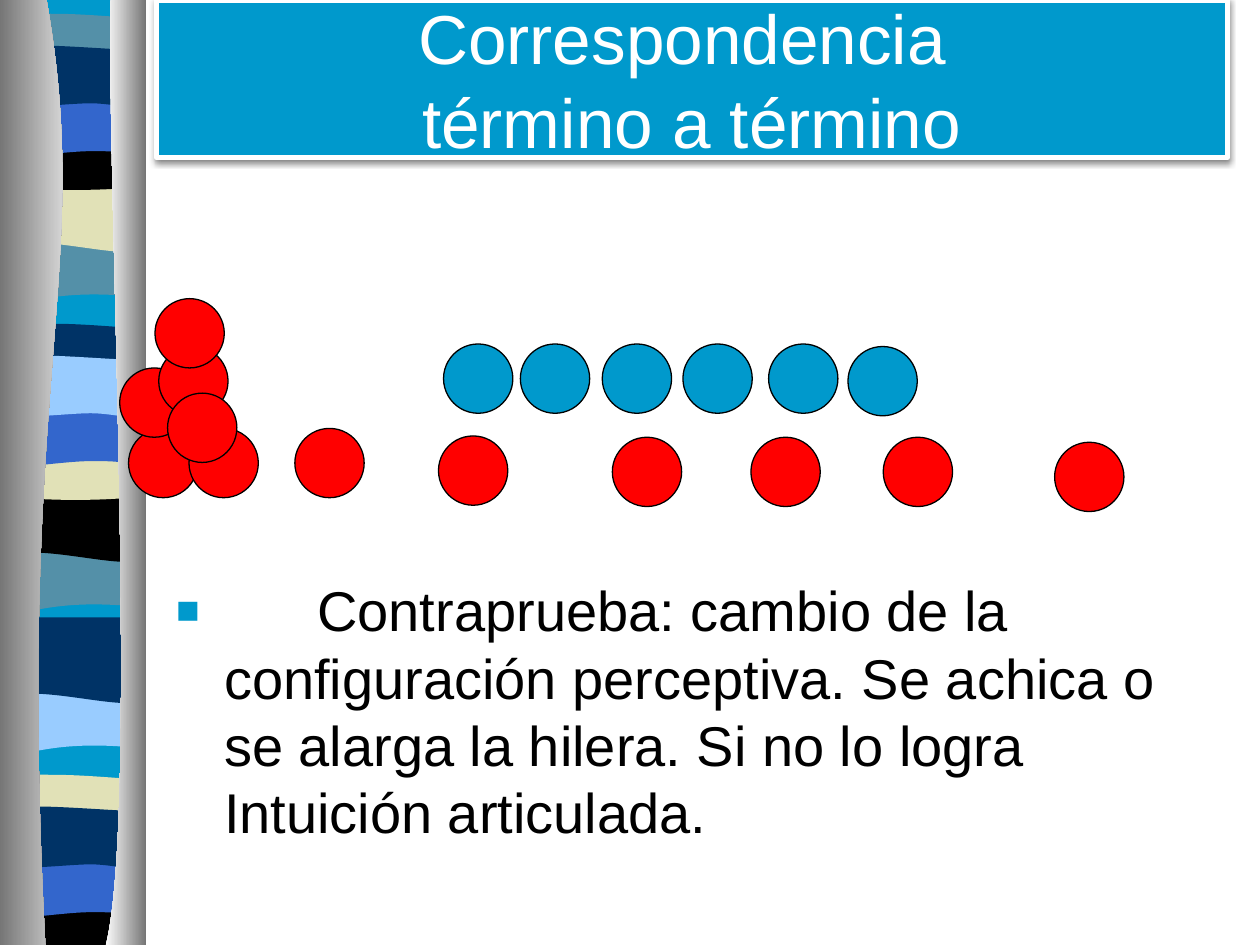
from lxml import etree
from pptx import Presentation
from pptx.dml.color import RGBColor
from pptx.enum import shapes, text
from pptx.oxml import ns
from pptx.util import Inches, Pt

COLORS = {
    "teal": "0099CC", "slate": "5490A8", "navy": "003366", "blue": "3366CC",
    "sky": "99CCFF", "sand": "E1E1B7", "black": "000000", "white": "FFFFFF",
    "gray": "767676", "red": "FF0000",
}
FONT = "Arial"
DIAMETER = 0.55

WAVES = [
    ((0.05, 1.85, 1.08, 0.55), [
        [(1.14, 1.85)], [(1.14, 2.36)],
        [(0.39, 2.28), (0.24, 2.44), (0.05, 2.39)], [(0.05, 1.85)]]),
    ((0.06, 1.41, 1.08, 0.55), [
        [(1.14, 1.32)], [(1.14, 1.98)],
        [(0.96, 2.06), (0.39, 1.87), (0.06, 1.94)], [(0.06, 1.32)]]),
    ((0.05, 0.16, 1.08, 0.33), [
        [(1.14, 0.15)], [(1.14, 0.45)],
        [(0.96, 0.5), (0.24, 0.5), (0.05, 0.45)], [(0.05, 0.15)],
        [(0.12, 0.09), (0.29, 0.11), (0.47, 0.11)],
        [(0.65, 0.11), (1, 0.14), (1.14, 0.15)]]),
    ((0.06, 1.08, 1.08, 0.38), [
        [(1.14, 1.08)], [(1.14, 1.47)],
        [(0.96, 1.52), (0.24, 1.52), (0.06, 1.47)], [(0.06, 1.08)],
        [(0.72, 1.13), (0.91, 1.08), (1.14, 1.08)]]),
    ((0.06, 0.74, 1.08, 0.47), [
        [(1.14, 0.74)], [(1.14, 1.25)],
        [(0.97, 1.2), (0.9, 1.2), (0.72, 1.2)],
        [(0.54, 1.2), (0.22, 1.25), (0.06, 1.25)], [(0.06, 0.74)]]),
    ((0.05, 0.41, 1.1, 0.41), [
        [(1.14, 0.4)], [(1.14, 0.83)],
        [(1.07, 0.88), (0.9, 0.82), (0.72, 0.82)],
        [(0.54, 0.82), (0.17, 0.87), (0.05, 0.83)], [(0.05, 0.38)],
        [(0.21, 0.33), (0.79, 0.39), (1.14, 0.4)]]),
]
STRIPES = [
    (("slate", "sand", "slate", "black", "blue", "navy"), (0,) * 6),
    (("slate", "black", "navy", "sand", "blue", "sky"), (2.46,) * 6),
    (("sky", "navy", "sand", "black", "blue", "navy"), (3.58,) * 2 + (6.04,) * 4),
]
BLUE_ROW = [(4.13, 2.73), (3.52, 2.73), (4.78, 2.73), (5.42, 2.73),
            (6.1, 2.73), (6.73, 2.75)]
RED_PILE = [(1.02, 3.4), (0.95, 2.92), (1.5, 3.4), (1.26, 2.75),
            (1.33, 3.12), (1.23, 2.37)]
RED_ROW = [(2.34, 3.4), (3.48, 3.46), (4.86, 3.47), (5.96, 3.47),
           (7.01, 3.47), (8.37, 3.51)]


def rgb(name):
    return RGBColor.from_string(COLORS[name])


def add_xml(parent, tag, **attributes):
    return etree.SubElement(parent, ns.qn(tag), attributes)


def add_outline(s, x, y, w, h, segments):
    corners = [(x, y), (x + w, y), (x + w, y + h), (x, y + h)]
    corners = [(Inches(a), Inches(b)) for a, b in corners]
    builder = s.shapes.build_freeform(*corners[0])
    builder.add_line_segments(corners[1:], close=True)
    sp = builder.convert_to_shape()
    sp.shadow.inherit = False
    sp.line.fill.background()
    outline = next(sp._element.iter(ns.qn("a:path")))
    for child in list(outline):
        outline.remove(child)
    for i, points in enumerate(segments):
        tag = "a:cubicBezTo" if len(points) == 3 else "a:lnTo" if i else "a:moveTo"
        step = add_xml(outline, tag)
        for a, b in points:
            add_xml(step, "a:pt", x=str(Inches(a - x)), y=str(Inches(b - y)))
    add_xml(outline, "a:close")
    return sp


def fill_solid(sp, color):
    sp.fill.solid()
    sp.fill.fore_color.rgb = rgb(color)


def add_curtain(s, x, y, w, h, edge, side, colors):
    start, *curve = edge
    sp = add_outline(s, x, y, w, h,
                     [[start], curve, [(side, y + h)], [(side, y)]])
    sp.fill.gradient()
    sp.fill.gradient_angle = 0
    for stop, name, position in zip(sp.fill.gradient_stops, colors, (0, 1)):
        stop.color.rgb = rgb(name)
        stop.position = position


def add_ribbon(s, x, y, w, h):
    base = [[(x + 1.14, y)], [(x + 1.14, y + 7.47)],
            [(x + 0.05, y + 7.47)], [(x + 0.05, y)]]
    fill_solid(add_outline(s, x + 0.05, y, 1.08, 7.48, base), "teal")
    for names, drops in STRIPES:
        for name, drop, ((left, top, width, height), segments) in zip(names, drops, WAVES):
            moved = [[(x + a, y + b + drop) for a, b in points] for points in segments]
            sp = add_outline(s, x + left, y + top + drop, width, height, moved)
            fill_solid(sp, name)
    add_curtain(s, x, y, 0.72, h,
                [(x + 0.37, y), (x + 0.75, y + 2.16), (x + 0.12, y + 2.96),
                 (x + 0.36, y + h)], x, ("gray", "white"))
    add_curtain(s, x + 0.83, y, 0.33, h,
                [(x + 0.88, y), (x + 0.84, y + 1.25), (x + 1.11, y + 6.46),
                 (x + 0.84, y + h)], x + w, ("white", "gray"))


def add_text(p, content, size, color):
    r = p.add_run()
    r.text = content
    r.font.name, r.font.size = FONT, Pt(size)
    r.font.color.rgb = rgb(color)


def add_title(s, x, y, w, h):
    sp = s.shapes.add_textbox(Inches(x), Inches(y), Inches(w), Inches(h))
    fill_solid(sp, "teal")
    sp.line.color.rgb = rgb("white")
    sp.line.width = Pt(3)
    effects = add_xml(sp._element.spPr, "a:effectLst")
    shadow = add_xml(effects, "a:outerShdw", blurRad="40000", dist="20000",
                     dir="5400000", rotWithShape="0")
    color = add_xml(shadow, "a:srgbClr", val=COLORS["black"])
    add_xml(color, "a:alpha", val="45000")
    tf = sp.text_frame
    tf.word_wrap = True
    tf.vertical_anchor = text.MSO_ANCHOR.MIDDLE
    p = tf.paragraphs[0]
    p.alignment = text.PP_ALIGN.CENTER
    add_text(p, "Correspondencia ", 39.6, "white")
    p.add_line_break()
    add_text(p, "término a término", 39.6, "white")


def add_conclusion(s, x, y, w, h):
    tf = s.shapes.add_textbox(Inches(x), Inches(y), Inches(w), Inches(h)).text_frame
    tf.word_wrap = True
    tf.margin_top = Inches(3.15)
    p = tf.paragraphs[0]
    pPr = p._p.get_or_add_pPr()
    pPr.set("marL", str(Inches(0.38)))
    pPr.set("indent", str(-Inches(0.38)))
    add_xml(add_xml(pPr, "a:buClr"), "a:srgbClr", val=COLORS["teal"])
    add_xml(pPr, "a:buSzPct", val="70000")
    add_xml(pPr, "a:buFont", typeface=FONT)
    add_xml(pPr, "a:buChar", char="■")
    add_xml(add_xml(pPr, "a:tabLst"), "a:tab", pos=str(Inches(1.12)), algn="l")
    add_text(p, "\tContraprueba: cambio de la configuración perceptiva. "
                "Se achica o se alarga la hilera. Si no lo logra "
                "Intuición articulada.", 32, "black")


def add_counters(s, x, y, places, color):
    for left, top in places:
        sp = s.shapes.add_shape(shapes.MSO_SHAPE.OVAL, Inches(x + left),
                                Inches(y + top), Inches(DIAMETER), Inches(DIAMETER))
        sp.shadow.inherit = False
        fill_solid(sp, color)
        sp.line.color.rgb = rgb("black")
        sp.line.width = Pt(0.75)


def main():
    prs = Presentation()
    prs.slide_width, prs.slide_height = Inches(10), Inches(7.5)
    s = prs.slides.add_slide(prs.slide_layouts[6])
    add_ribbon(s, 0, 0, 1.16, 7.5)
    add_title(s, 1.24, 0, 8.5, 1.25)
    add_conclusion(s, 1.3, 1.42, 8.5, 4.5)
    for places, color in ((BLUE_ROW, "teal"), (RED_PILE, "red"), (RED_ROW, "red")):
        add_counters(s, 0, 0, places, color)
    prs.save("out.pptx")


if __name__ == "__main__":
    main()
